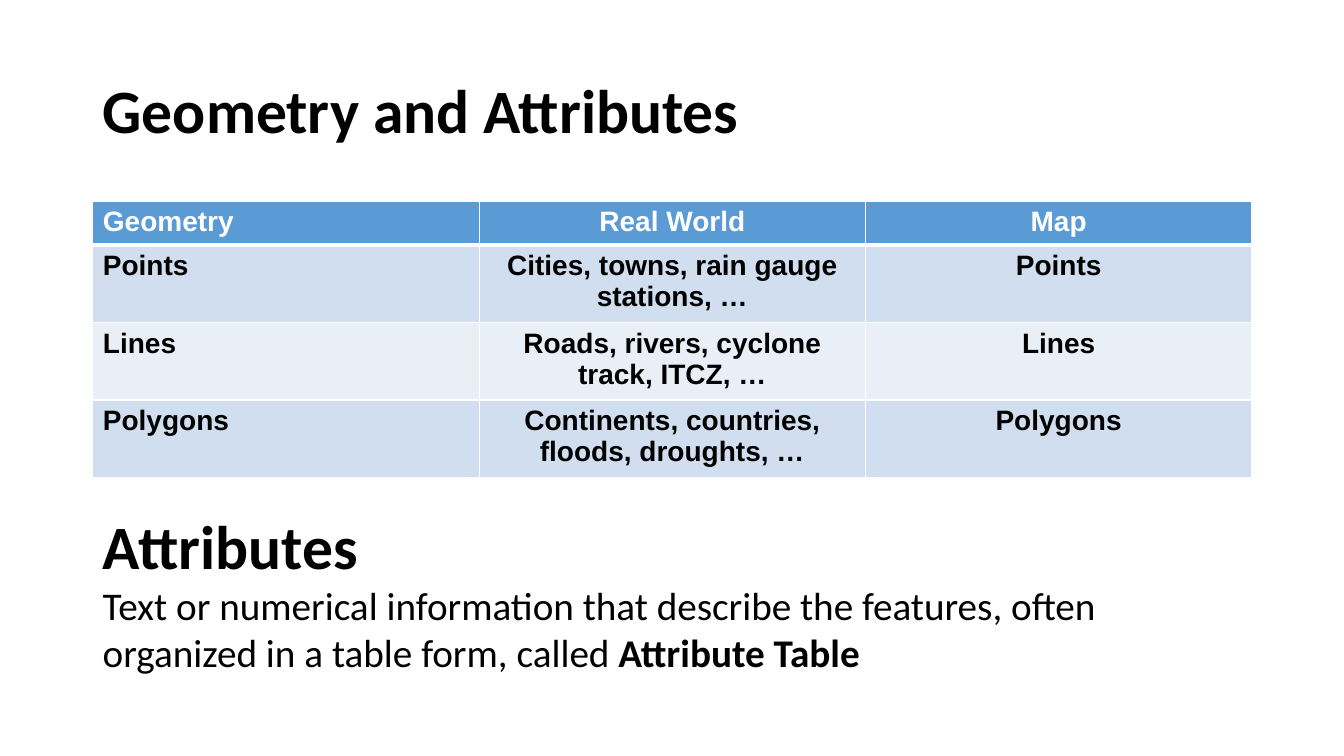
from dataclasses import dataclass

from lxml.etree import SubElement
from pptx import Presentation
from pptx.dml.color import RGBColor as Rgb
from pptx.enum.text import MSO_ANCHOR as Anchor, PP_ALIGN as Align
from pptx.oxml.ns import qn
from pptx.util import Cm, Pt


@dataclass(frozen=True)
class Theme:
    heading_font: str = "Calibri"
    table_font: str = "Arial"
    heading_size: int = 44
    body_size: int = 28
    table_size: int = 20
    grid_width: int = 1
    header_rule_width: int = 3
    ink: str = "000000"
    paper: str = "FFFFFF"
    header: str = "5B9BD5"
    bands: tuple = ("D0DEEF", "E9EFF7")


THEME = Theme()
MARGIN_LEFT, CONTENT_WIDTH = 2.34, 29.21
HEADER_HEIGHT, ROW_HEIGHT = 1.03, 1.84

GEOMETRY_ROWS = [
    ("Geometry", "Real World", "Map"),
    ("Points", "Cities, towns, rain gauge stations, …", "Points"),
    ("Lines", "Roads, rivers, cyclone track, ITCZ, …", "Lines"),
    ("Polygons", "Continents, countries, floods, droughts, …", "Polygons"),
]


def apply_format(target, values):
    for name, value in values.items():
        setattr(target, name, value)


def add_words(paragraph, words, size, font=THEME.heading_font, color=THEME.ink, bold=True):
    run = paragraph.add_run()
    run.text = words
    apply_format(run.font, {"name": font, "size": Pt(size), "bold": bold})
    run.font.color.rgb = Rgb.from_string(color)


def add_text_frame(slide, box, anchor):
    frame = slide.shapes.add_textbox(*map(Cm, box)).text_frame
    apply_format(frame, {"word_wrap": True, "vertical_anchor": anchor})
    return frame


def add_title(slide, box):
    title = add_text_frame(slide, box, Anchor.MIDDLE).paragraphs[0]
    title.line_spacing = 0.9
    add_words(title, "Geometry and Attributes", THEME.heading_size)


def draw_cell_borders(cell, top_width, bottom_width):
    properties = cell._tc.get_or_add_tcPr()
    widths = {"a:lnL": THEME.grid_width, "a:lnR": THEME.grid_width,
              "a:lnT": top_width, "a:lnB": bottom_width}
    for side, width in widths.items():
        border = SubElement(properties, qn(side), w=str(Pt(width)))
        SubElement(SubElement(border, qn("a:solidFill")), qn("a:srgbClr"), val=THEME.paper)


def add_geometry_table(slide, box):
    row_count, column_count = len(GEOMETRY_ROWS), len(GEOMETRY_ROWS[0])
    table = slide.shapes.add_table(row_count, column_count, *map(Cm, box)).table
    for column in table.columns:
        column.width = Cm(box[2] / column_count)
    for row_index, entries in enumerate(GEOMETRY_ROWS):
        is_header = row_index == 0
        table.rows[row_index].height = Cm(HEADER_HEIGHT if is_header else ROW_HEIGHT)
        background = THEME.header if is_header else THEME.bands[(row_index - 1) % 2]
        ink = THEME.paper if is_header else THEME.ink
        top_width = THEME.header_rule_width if row_index == 1 else THEME.grid_width
        bottom_width = THEME.header_rule_width if is_header else THEME.grid_width
        for column_index, entry in enumerate(entries):
            cell = table.cell(row_index, column_index)
            draw_cell_borders(cell, top_width, bottom_width)
            cell.fill.solid()
            cell.fill.fore_color.rgb = Rgb.from_string(background)
            paragraph = cell.text_frame.paragraphs[0]
            paragraph.alignment = Align.CENTER if column_index else Align.LEFT
            add_words(paragraph, entry, THEME.table_size, THEME.table_font, ink)


def add_attributes(slide, box):
    frame = add_text_frame(slide, box, Anchor.TOP)
    add_words(frame.paragraphs[0], "Attributes", THEME.heading_size)
    definition = frame.add_paragraph()
    add_words(definition, "Text or numerical information that describe the features, "
              "often organized in a table form, called ", THEME.body_size, bold=False)
    add_words(definition, "Attribute Table", THEME.body_size)


def main():
    deck = Presentation()
    apply_format(deck, {"slide_width": Cm(33.87), "slide_height": Cm(19.05)})
    slide = deck.slides.add_slide(deck.slide_layouts[6])
    table_height = HEADER_HEIGHT + ROW_HEIGHT * (len(GEOMETRY_ROWS) - 1)
    add_title(slide, (MARGIN_LEFT, 1.02, CONTENT_WIDTH, 3.68))
    add_geometry_table(slide, (MARGIN_LEFT, 5.08, CONTENT_WIDTH, table_height))
    add_attributes(slide, (MARGIN_LEFT, 12.67, CONTENT_WIDTH, 4.52))
    deck.save("out.pptx")


if __name__ == "__main__":
    main()
